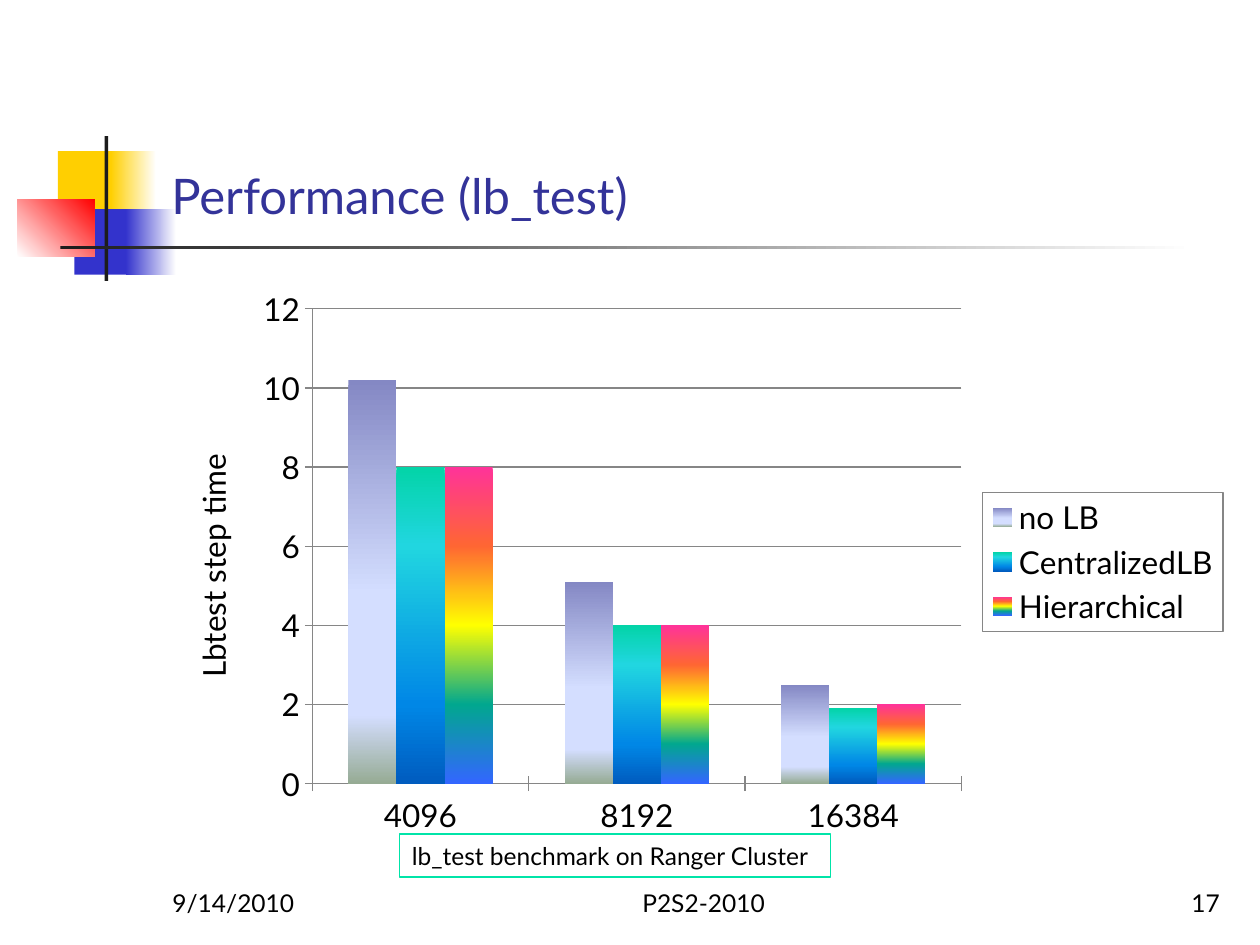
from lxml import etree
from pptx import Presentation
from pptx import util as u
from pptx.chart.data import CategoryChartData
from pptx.dml.color import RGBColor
from pptx.enum import chart as charts, shapes, text
from pptx.oxml.ns import qn

FONT = "Lato"
BLACK, WHITE, GRAY = "000000", "FFFFFF", "868686"
YELLOW, BLUE, RED, INK = "FFCF01", "3333CC", "FF0000", "1C1C1C"
FOOTER_TOP, FOOTER_HEIGHT = 6.83, 0.5

# Left, top, width, height, gradient stops or plain colour, angle
DECORATION = [
    (0.46, 1.2, 0.48, 0.52, YELLOW, 0),
    (0.88, 1.2, 0.36, 0.52, [(0, YELLOW), (100, WHITE)], 0),
    (0.59, 1.66, 0.46, 0.52, BLUE, 0),
    (1, 1.66, 0.4, 0.52, [(0, BLUE), (100, WHITE)], 0),
    (0.14, 1.58, 0.61, 0.46, [(0, WHITE), (100, RED)], 315),
    (0.83, 1.08, 0.03, 1.15, INK, 0),
    (0.48, 1.95, 9, 0.03, [(0, INK), (100, WHITE)], 0),
]

CATEGORIES = ["4096", "8192", "16384"]
SERIES = [
    ("no LB", [10.2, 5.1, 2.5],
     [(0, "8488C4"), (53, "D4DEFF"), (83, "D4DEFF"), (100, "96AB94")]),
    ("CentralizedLB", [8, 4, 1.9],
     [(0, "03D4A8"), (25, "21D6E0"), (75, "0087E6"), (100, "005CBF")]),
    ("Hierarchical", [8, 4, 2],
     [(0, "FF3399"), (25, "FF6633"), (50, "FFFF00"), (75, "01A78F"), (100, "3366FF")]),
]


def color(value):
    return RGBColor.from_string(value)


def box(*lengths):
    return [u.Inches(length) for length in lengths]


def set_font(font, size, value=BLACK):
    font.name, font.size, font.bold = FONT, u.Pt(size), False
    font.color.rgb = color(value)


def set_line(line, value):
    line.color.rgb = color(value)
    line.width = u.Pt(0.75)


def set_gradient(fill, properties, stops, angle):
    """Replace the solid fill inside the shape properties by a gradient."""
    fill.solid()
    solid = properties.find(qn("a:solidFill"))
    gradient = etree.Element(qn("a:gradFill"), rotWithShape="1")
    stop_list = etree.SubElement(gradient, qn("a:gsLst"))
    for position, value in stops:
        stop = etree.SubElement(stop_list, qn("a:gs"), pos=str(position * 1000))
        etree.SubElement(stop, qn("a:srgbClr"), val=value)
    etree.SubElement(gradient, qn("a:lin"), ang=str(angle * 60000), scaled="0")
    properties.replace(solid, gradient)


def write(frame, words, size, value=BLACK, align=text.PP_ALIGN.LEFT):
    paragraph = frame.paragraphs[0]
    paragraph.alignment = align
    run = paragraph.add_run()
    run.text = words
    set_font(run.font, size, value)


def add_rectangle(slide, *lengths):
    shape = slide.shapes.add_shape(shapes.MSO_SHAPE.RECTANGLE, *box(*lengths))
    shape.shadow.inherit = False
    return shape


def add_decoration(slide):
    for *lengths, paint, angle in DECORATION:
        shape = add_rectangle(slide, *lengths)
        shape.line.fill.background()
        if isinstance(paint, str):
            shape.fill.solid()
            shape.fill.fore_color.rgb = color(paint)
        else:
            set_gradient(shape.fill, shape.element.spPr, paint, angle)


def add_title(slide, words):
    title = slide.shapes.title
    title.left, title.top, title.width, title.height = box(1.26, 0.23, 8.52, 1.6)
    title.text_frame.vertical_anchor = text.MSO_ANCHOR.BOTTOM
    write(title.text_frame, words, 28, "333399")
    slide.shapes.element.append(title.element)  # in front of the decoration


def add_caption(slide, words):
    shape = add_rectangle(slide, 3.17, 6.62, 3.42, 0.34)
    shape.fill.background()
    set_line(shape.line, "00E4A8")
    shape.text_frame.word_wrap = False
    shape.text_frame.auto_size = text.MSO_AUTO_SIZE.SHAPE_TO_FIT_TEXT
    write(shape.text_frame, words, 14)


def add_footer(slide, left, width, words, align):
    shape = slide.shapes.add_textbox(*box(left, FOOTER_TOP, width, FOOTER_HEIGHT))
    shape.text_frame.word_wrap = True
    shape.text_frame.vertical_anchor = text.MSO_ANCHOR.BOTTOM
    write(shape.text_frame, words, 14, align=align)


def add_step_time_chart(slide):
    data = CategoryChartData()
    data.categories = CATEGORIES
    for name, values, _ in SERIES:
        data.add_series(name, values)
    chart = slide.shapes.add_chart(charts.XL_CHART_TYPE.COLUMN_CLUSTERED,
                                   *box(1.29, 2.21, 8.5, 4.5), data).chart
    set_font(chart.font, 18)
    chart.has_title = False

    # Columns
    plot = chart.plots[0]
    plot.vary_by_categories = False
    plot.gap_width, plot.overlap = 150, 0
    for series, (_, _, stops) in zip(plot.series, SERIES):
        fill = series.format.fill
        set_gradient(fill, series._element.get_or_add_spPr(), stops, 90)

    # Axes
    for axis in (chart.category_axis, chart.value_axis):
        axis.major_tick_mark = charts.XL_TICK_MARK.CROSS
        set_line(axis.format.line, GRAY)
    value_axis = chart.value_axis
    value_axis.minimum_scale, value_axis.maximum_scale, value_axis.major_unit = 0, 12, 2
    set_line(value_axis.major_gridlines.format.line, GRAY)
    write(value_axis.axis_title.text_frame, "Lbtest step time ", 18,
          align=text.PP_ALIGN.CENTER)

    # Legend
    chart.has_legend = True
    chart.legend.position = charts.XL_LEGEND_POSITION.RIGHT
    chart.legend.include_in_layout = False
    set_font(chart.legend.font, 18)
    frame = etree.Element(qn("c:spPr"))
    line = etree.SubElement(frame, qn("a:ln"), w=str(u.Pt(0.75)))
    solid = etree.SubElement(line, qn("a:solidFill"))
    etree.SubElement(solid, qn("a:srgbClr"), val=GRAY)
    chart.legend._element.find(qn("c:txPr")).addprevious(frame)


def main():
    presentation = Presentation()
    presentation.slide_width, presentation.slide_height = box(10, 7.5)
    slide = presentation.slides.add_slide(presentation.slide_layouts[5])
    add_decoration(slide)
    add_title(slide, "Performance (lb_test)")
    add_caption(slide, "lb_test benchmark on Ranger Cluster")
    add_step_time_chart(slide)
    add_footer(slide, 1.27, 2.08, "9/14/2010", text.PP_ALIGN.LEFT)
    add_footer(slide, 4, 3.17, "P2S2-2010", text.PP_ALIGN.CENTER)
    add_footer(slide, 7.7, 2.08, "17", text.PP_ALIGN.RIGHT)
    presentation.save("out.pptx")


if __name__ == "__main__":
    main()
